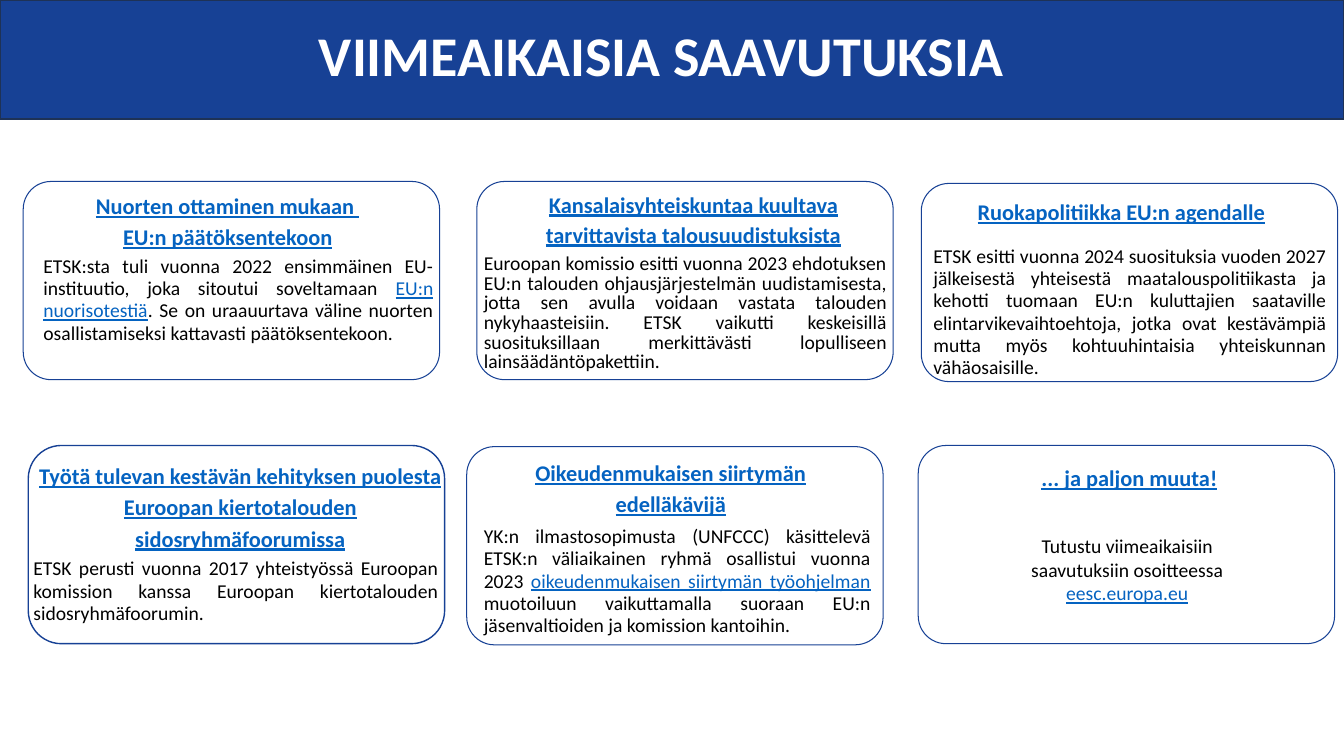
from dataclasses import dataclass

from pptx import Presentation
from pptx.dml.color import RGBColor
from pptx.enum.shapes import MSO_SHAPE
from pptx.enum.text import MSO_ANCHOR, PP_ALIGN
from pptx.util import Pt


@dataclass(frozen=True)
class Theme:
    font: str = "Calibri"
    blue: RGBColor = RGBColor(0x17, 0x41, 0x95)
    banner_edge: RGBColor = RGBColor(0x1E, 0x32, 0x56)
    link: RGBColor = RGBColor(0x05, 0x63, 0xC1)
    black: RGBColor = RGBColor(0, 0, 0)
    white: RGBColor = RGBColor(0xFF, 0xFF, 0xFF)
    title_size: int = 40
    heading_size: int = 16
    body_size: int = 14


@dataclass(frozen=True)
class Link:
    text: str


@dataclass(frozen=True)
class Card:
    """A frame with heading and body; areas are (left, top, width, height)."""
    corner: tuple
    heading_area: tuple
    heading: list
    body_area: tuple
    body: list
    heading_leading: float = 22.4
    body_leading: float = 15.9
    body_align: PP_ALIGN = PP_ALIGN.JUSTIFY
    outline: float = 0.75
    rounding: float = 0.14


CARD_WIDTH, CARD_HEIGHT = 297.4, 141.6

CARDS = [
    Card((16.6, 129.6),
         (19.4, 133.9, 286.6, 43.2),
         ["Nuorten ottaminen mukaan ", "EU:n päätöksentekoon"],
         (31, 182.2, 278.6, 64),
         ["ETSK:sta tuli vuonna 2022 ensimmäinen EU-instituutio, joka sitoutui soveltamaan ",
          Link("EU:n nuorisotestiä"),
          ". Se on uraauurtava väline nuorten osallistamiseksi kattavasti päätöksentekoon."]),
    Card((340.6, 129.6),
         (351.4, 133.9, 288, 62.6),
         ["Kansalaisyhteiskuntaa kuultava tarvittavista talousuudistuksista"],
         (345.6, 182.2, 288, 85),
         ["Euroopan komissio esitti vuonna 2023 ehdotuksen EU:n talouden "
          "ohjausjärjestelmän uudistamisesta, jotta sen avulla voidaan vastata talouden "
          "nykyhaasteisiin. ETSK vaikutti keskeisillä suosituksillaan merkittävästi "
          "lopulliseen lainsäädäntöpakettiin."],
         heading_leading=21.5, body_leading=14),
    Card((658.1, 131),
         (658.8, 138.2, 284.4, 21),
         ["Ruokapolitiikka EU:n agendalle"],
         (666.7, 175, 280.8, 80.6),
         ["ETSK esitti vuonna 2024 suosituksia vuoden 2027 jälkeisestä yhteisestä "
          "maatalouspolitiikasta ja kehotti tuomaan EU:n kuluttajien saataville "
          "elintarvikevaihtoehtoja, jotka ovat kestävämpiä mutta myös kohtuuhintaisia "
          "yhteiskunnan vähäosaisille."]),
    Card((20.2, 318.2),
         (23, 326.9, 297.4, 65.5),
         ["Työtä tulevan kestävän kehityksen puolesta Euroopan kiertotalouden "
          "sidosryhmäfoorumissa"],
         (23.8, 398.2, 289.4, 48.2),
         ["ETSK perusti vuonna 2017 yhteistyössä Euroopan komission kanssa Euroopan "
          "kiertotalouden sidosryhmäfoorumin."],
         outline=1, rounding=0.167),
    Card((333.4, 319),
         (342, 324.7, 274.3, 21),
         ["Oikeudenmukaisen siirtymän edelläkävijä"],
         (345.6, 375.1, 276.5, 98),
         ["YK:n ilmastosopimusta (UNFCCC) käsittelevä ETSK:n väliaikainen ryhmä "
          "osallistui vuonna 2023 ",
          Link("oikeudenmukaisen siirtymän työohjelman"),
          " muotoiluun vaikuttamalla suoraan EU:n jäsenvaltioiden ja komission "
          "kantoihin."]),
    Card((655.9, 318.2),
         (724.3, 328.3, 164.9, 21.6),
         ["... ja paljon muuta!"],
         (711.2, 381.6, 188, 33.8),
         ["Tutustu viimeaikaisiin saavutuksiin osoitteessa ", Link("eesc.europa.eu")],
         body_leading=16.8, body_align=PP_ALIGN.CENTER),
]


class SlideBuilder:
    def __init__(self, page, theme):
        self.page = page
        self.theme = theme

    def shape(self, kind, area, line_color, line_width, fill=None):
        shape = self.page.shapes.add_shape(kind, *map(Pt, area))
        shape.shadow.inherit = False
        if fill is None:
            shape.fill.background()
        else:
            shape.fill.solid()
            shape.fill.fore_color.rgb = fill
        shape.line.color.rgb = line_color
        shape.line.width = Pt(line_width)
        return shape

    def text(self, area, paragraphs, size, color, leading,
             align=PP_ALIGN.CENTER, bold=False, underline=False):
        """Add a text box; each paragraph is a list of strings and Links."""
        box = self.page.shapes.add_textbox(*map(Pt, area))
        frame = box.text_frame
        frame.word_wrap = True
        frame.vertical_anchor = MSO_ANCHOR.TOP
        frame.margin_left = frame.margin_right = 0
        frame.margin_top = frame.margin_bottom = 0
        for index, spans in enumerate(paragraphs):
            para = frame.add_paragraph() if index else frame.paragraphs[0]
            para.alignment = align
            para.line_spacing = Pt(leading)
            para.font.name = self.theme.font
            para.font.size = Pt(size)
            para.font.bold = bold
            para.font.underline = underline
            para.font.color.rgb = color
            for content in spans:
                span = para.add_run()
                if isinstance(content, Link):
                    span.text = content.text
                    span.font.underline = True
                    span.font.color.rgb = self.theme.link
                else:
                    span.text = content

    def banner(self, title):
        theme = self.theme
        self.shape(MSO_SHAPE.RECTANGLE, (0, 0, 960, 85), theme.banner_edge, 1, theme.blue)
        self.text((203, 29.5, 538.6, 36), [[title]], theme.title_size, theme.white, 33,
                  bold=True)

    def card(self, card):
        theme = self.theme
        frame = self.shape(MSO_SHAPE.ROUNDED_RECTANGLE,
                           (*card.corner, CARD_WIDTH, CARD_HEIGHT),
                           theme.blue, card.outline)
        frame.adjustments[0] = card.rounding
        self.text(card.heading_area, [[line] for line in card.heading],
                  theme.heading_size, theme.link, card.heading_leading,
                  bold=True, underline=True)
        self.text(card.body_area, [card.body], theme.body_size, theme.black,
                  card.body_leading, card.body_align)


def main():
    deck = Presentation()
    deck.slide_width, deck.slide_height = Pt(960), Pt(540)
    page = deck.slides.add_slide(deck.slide_layouts[6])
    builder = SlideBuilder(page, Theme())
    builder.banner("VIIMEAIKAISIA SAAVUTUKSIA")
    for card in CARDS:
        builder.card(card)
    deck.save("out.pptx")


if __name__ == "__main__":
    main()
